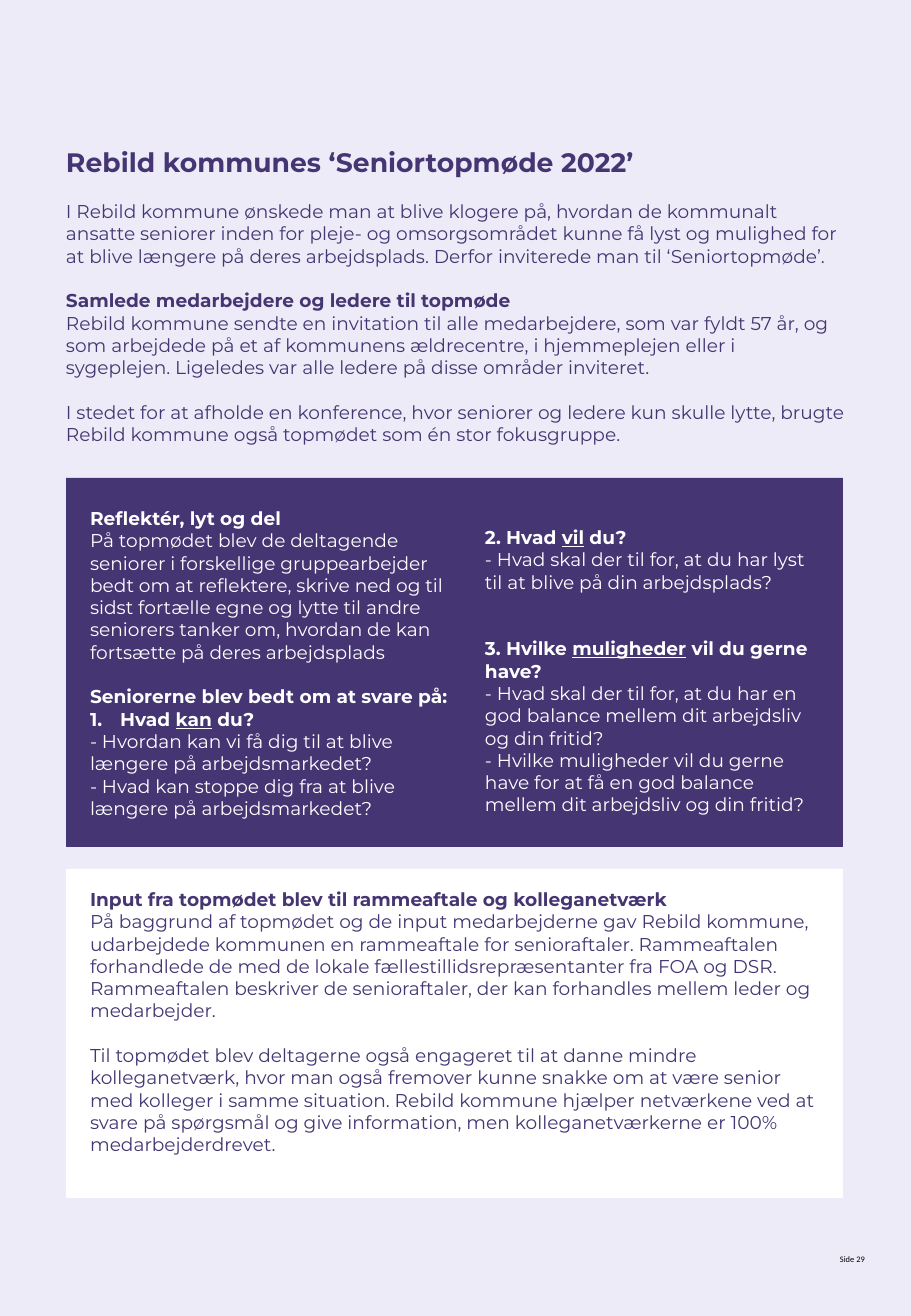
from lxml import etree
from pptx import Presentation
from pptx.dml.color import RGBColor
from pptx.enum.shapes import MSO_SHAPE
from pptx.enum.text import MSO_ANCHOR, PP_ALIGN
from pptx.oxml.ns import qn
from pptx.util import Pt

RECT = MSO_SHAPE.RECTANGLE
TOP = MSO_ANCHOR.TOP
LEFT, RIGHT = PP_ALIGN.LEFT, PP_ALIGN.RIGHT

PX = 914400 / 121.5
PURPLE, LILAC, WHITE, BLACK = "453673", "EDEBF7", "FFFFFF", "000000"
BODY_SIZE, EMPTY_LINE = 11, 13.2
NUMBER_INDENT = 30

# Each paragraph: (style, text, empty lines above).
# Styles: "b" bold, "n" normal, "1" bold and numbered. _word_ is underlined.
TITLE = [("b", "Rebild kommunes ‘Seniortopmøde 2022’", 0)]
INTRO = [
    ("n", "I Rebild kommune ønskede man at blive klogere på, hvordan de kommunalt ansatte seniorer "
          "inden for pleje- og omsorgsområdet kunne få lyst og mulighed for at blive længere på "
          "deres arbejdsplads. Derfor inviterede man til ‘Seniortopmøde’.", 0),
    ("b", "Samlede medarbejdere og ledere til topmøde", 1),
    ("n", "Rebild kommune sendte en invitation til alle medarbejdere, som var fyldt 57 år, og som "
          "arbejdede på et af kommunens ældrecentre, i hjemmeplejen eller i sygeplejen. Ligeledes "
          "var alle ledere på disse områder inviteret.", 0),
    ("n", "I stedet for at afholde en konference, hvor seniorer og ledere kun skulle lytte, brugte "
          "Rebild kommune også topmødet som én stor fokusgruppe.", 1),
]
REFLECT = [
    ("b", "Reflektér, lyt og del", 0),
    ("n", "På topmødet blev de deltagende seniorer i forskellige gruppearbejder bedt om at "
          "reflektere, skrive ned og til sidst fortælle egne og lytte til andre seniorers tanker "
          "om, hvordan de kan fortsætte på deres arbejdsplads", 0),
    ("b", "Seniorerne blev bedt om at svare på:", 1),
    ("1", "Hvad _kan_ du?", 0),
    ("n", "- Hvordan kan vi få dig til at blive længere på arbejdsmarkedet?", 0),
    ("n", "- Hvad kan stoppe dig fra at blive længere på arbejdsmarkedet?", 0),
]
QUESTIONS = [
    ("b", "2. Hvad _vil_ du?", 0),
    ("n", "- Hvad skal der til for, at du har lyst til at blive på din arbejdsplads?", 0),
    ("b", "3. Hvilke _muligheder_ vil du gerne have?", 2),
    ("n", "- Hvad skal der til for, at du har en god balance mellem dit arbejdsliv og din fritid?", 0),
    ("n", "- Hvilke muligheder vil du gerne have for at få en god balance mellem dit arbejdsliv og "
          "din fritid?", 0),
]
OUTCOME = [
    ("b", "Input fra topmødet blev til rammeaftale og kolleganetværk", 0),
    ("n", "På baggrund af topmødet og de input medarbejderne gav Rebild kommune, udarbejdede "
          "kommunen en rammeaftale for senioraftaler. Rammeaftalen forhandlede de med de lokale "
          "fællestillidsrepræsentanter fra FOA og DSR. Rammeaftalen beskriver de senioraftaler, "
          "der kan forhandles mellem leder og medarbejder.", 0),
    ("n", "Til topmødet blev deltagerne også engageret til at danne mindre kolleganetværk, hvor man "
          "også fremover kunne snakke om at være senior med kolleger i samme situation. Rebild "
          "kommune hjælper netværkene ved at svare på spørgsmål og give information, men "
          "kolleganetværkerne er 100% medarbejderdrevet.", 1),
]
PAGE = [("n", "Side 29", 0)]


def px(n):
    return round(n * PX)


def rgb(color):
    return RGBColor.from_string(color)


def number(p):
    """Give the paragraph a hanging automatic number."""
    pPr = p._p.get_or_add_pPr()
    pPr.set("marL", str(px(NUMBER_INDENT)))
    pPr.set("indent", str(-px(NUMBER_INDENT)))
    etree.SubElement(pPr, qn("a:buFont"), typeface="+mj-lt")
    etree.SubElement(pPr, qn("a:buAutoNum"), type="arabicPeriod")


def write(sp, paragraphs, color, size=BODY_SIZE, font="Montserrat", align=LEFT, insets=(0, 0, 0)):
    """Fill a shape with text; insets are left, top, right."""
    tf = sp.text_frame
    tf.word_wrap = True
    tf.vertical_anchor = TOP
    tf.margin_left, tf.margin_top, tf.margin_right = map(px, insets)
    tf.margin_bottom = 0
    for i, (style, text, gap) in enumerate(paragraphs):
        p = tf.paragraphs[0] if i == 0 else tf.add_paragraph()
        p.alignment = align
        if gap:
            p.space_before = Pt(gap * EMPTY_LINE)
        if style == "1":
            number(p)
        for j, part in enumerate(text.split("_")):
            r = p.add_run()
            r.text = part
            r.font.name, r.font.size = font, Pt(size)
            r.font.bold = style != "n"
            r.font.underline = j % 2 == 1
            r.font.color.rgb = rgb(color)


def text_box(slide, box, paragraphs, color, **style):
    write(slide.shapes.add_textbox(*map(px, box)), paragraphs, color, **style)


def panel(slide, box, fill, paragraphs, color, insets):
    sp = slide.shapes.add_shape(RECT, *map(px, box))
    sp.shadow.inherit = False
    sp.fill.solid()
    sp.fill.fore_color.rgb = rgb(fill)
    sp.line.fill.background()
    write(sp, paragraphs, color, insets=insets)


def main():
    prs = Presentation()
    prs.slide_width, prs.slide_height = px(911), px(1316)
    slide = prs.slides.add_slide(prs.slide_layouts[6])
    slide.background.fill.solid()
    slide.background.fill.fore_color.rgb = rgb(LILAC)

    left, width, pad = 66, 777, 24
    text_box(slide, (left, 146, width + 3, 40), TITLE, PURPLE, size=15.8)
    text_box(slide, (left, 200, width + 3, 248), INTRO, PURPLE)
    panel(slide, (left, 478, width, 369), PURPLE, REFLECT, WHITE, (pad, 29, width // 2))
    text_box(slide, (485, 526, 340, 292), QUESTIONS, WHITE)
    panel(slide, (left, 869, width, 329), WHITE, OUTCOME, PURPLE, (pad, 19, pad))
    text_box(slide, (751, 1254, 114, 28), PAGE, BLACK, size=5, font="Calibri", align=RIGHT)
    prs.save("out.pptx")


if __name__ == "__main__":
    main()
